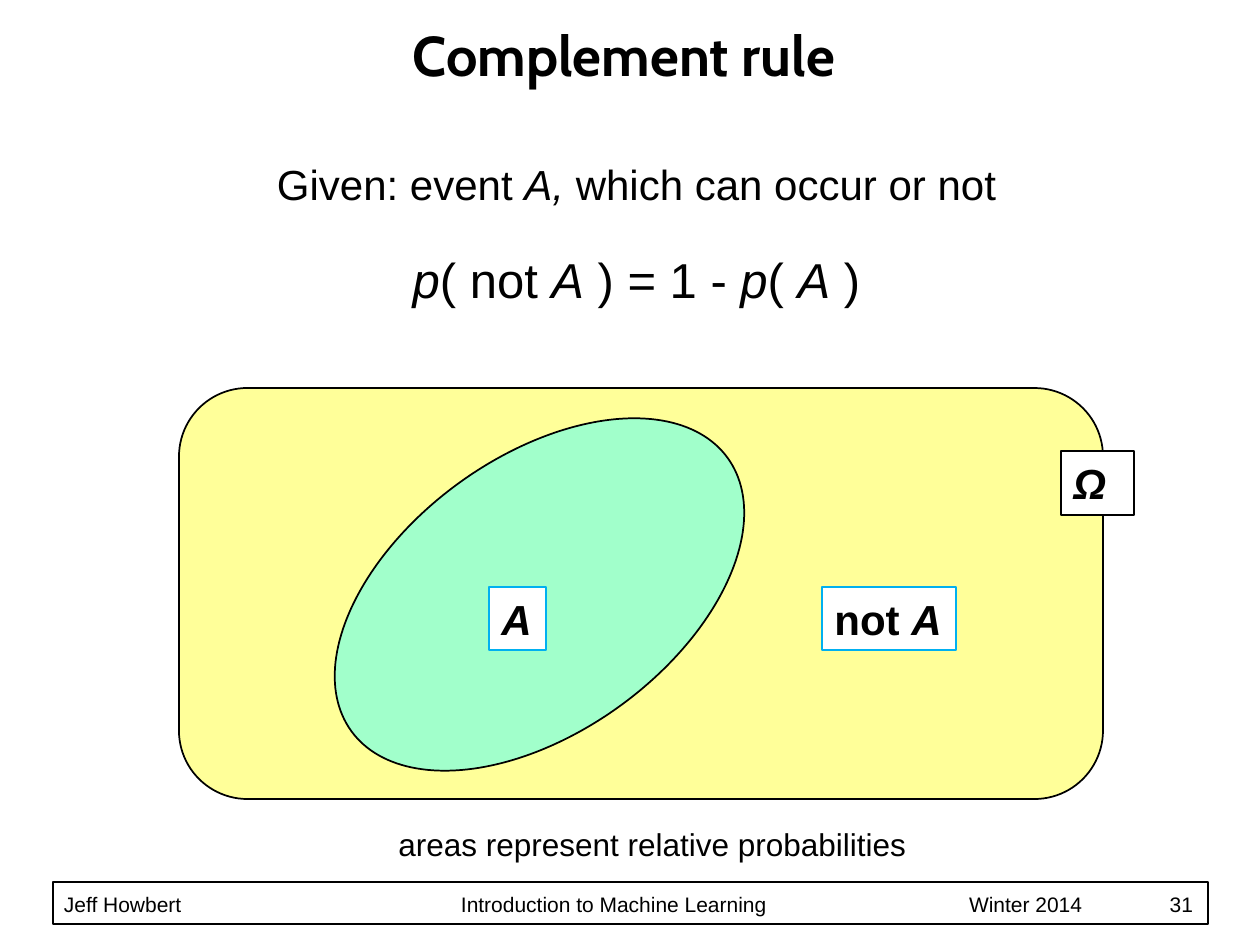
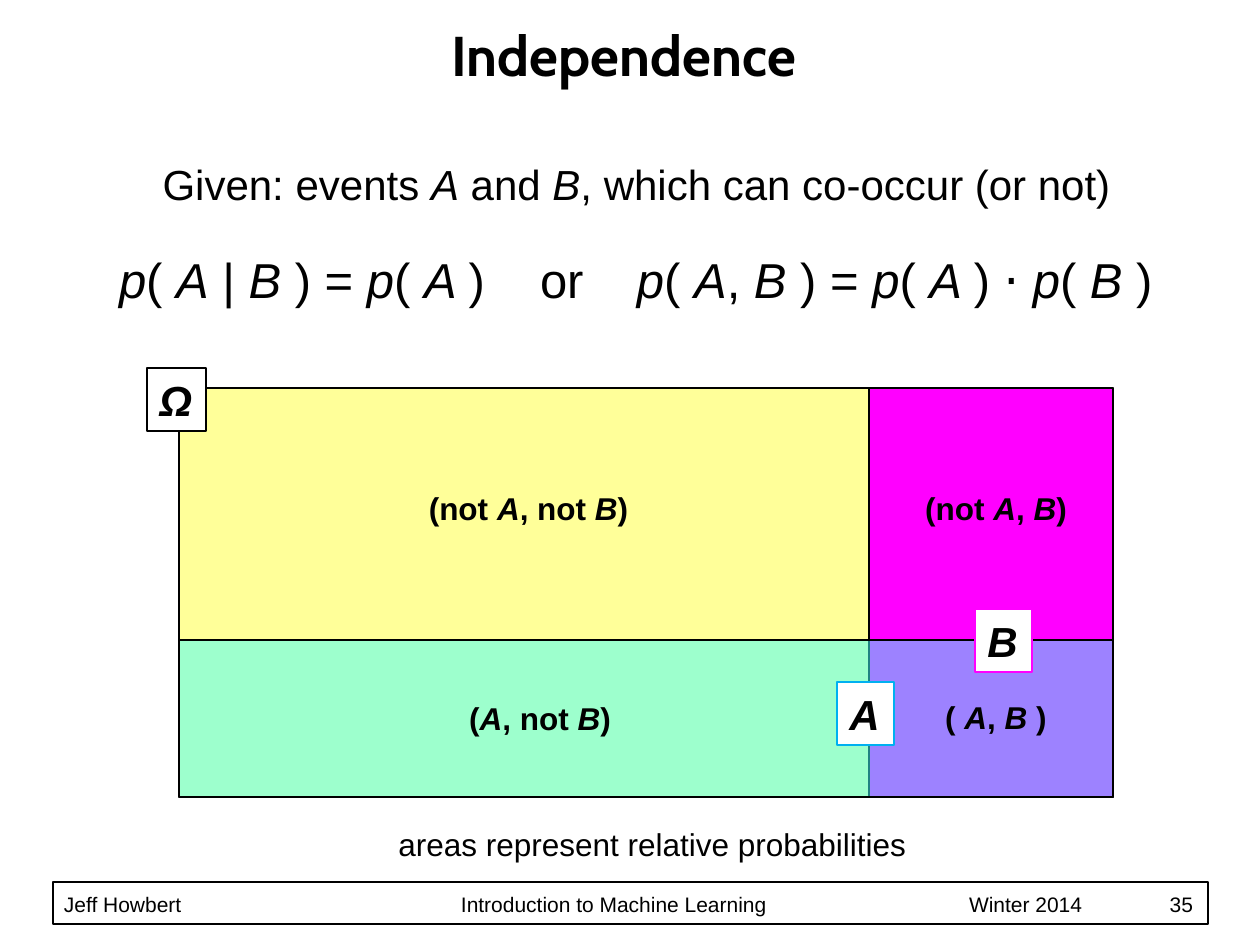
import dataclasses
import pptx
import pptx.dml.color
import pptx.enum.shapes
import pptx.enum.text
import pptx.oxml
import pptx.oxml.ns
import pptx.util

ALIGN = pptx.enum.text.PP_ALIGN
ANCHOR = pptx.enum.text.MSO_ANCHOR
SHAPE = pptx.enum.shapes.MSO_SHAPE
RGB = pptx.dml.color.RGBColor.from_string


@dataclasses.dataclass(frozen=True)
class Theme:
    heading_font: str = "Cabin"
    body_font: str = "Arial"
    ink: str = "000000"
    paper: str = "FFFFFF"
    sky: str = "00B0F0"
    yellow: str = "FFFF99"
    magenta: str = "FF00FF"
    cyan: str = "40FFFF"
    title_size: int = 32
    title_leading: int = 36
    formula_size: int = 28
    given_size: int = 24
    note_size: int = 18
    footer_size: int = 12
    footer_leading: int = 20


theme = Theme()
FLUSH = dict(margin_left=0, margin_right=0, margin_top=0, margin_bottom=0)


def px(*lengths):
    return [round(length * 914400 / 126) for length in lengths]


def write(holder, markup, size, font=theme.body_font, bold=False, align=ALIGN.LEFT,
          leading=None, tabs=(), **frame_format):
    frame = holder.text_frame
    frame_format = dict(word_wrap=True, auto_size=pptx.enum.text.MSO_AUTO_SIZE.NONE,
                        vertical_anchor=ANCHOR.TOP) | frame_format
    for attribute, value in frame_format.items():
        setattr(frame, attribute, value)
    paragraph = frame.paragraphs[0]
    paragraph.alignment = align
    if tabs:
        stops = "".join(f'<a:tab pos="{px(stop)[0]}" algn="{side}"/>' for stop, side in tabs)
        paragraph._p.get_or_add_pPr().append(pptx.oxml.parse_xml(
            f'<a:tabLst {pptx.oxml.ns.nsdecls("a")}>{stops}</a:tabLst>'))
    if leading:
        paragraph.line_spacing = pptx.util.Pt(leading)
    for index, piece in enumerate(markup.split("_")):
        if piece:
            run = paragraph.add_run()
            run.text = piece
            run_format = dict(name=font, size=pptx.util.Pt(size), bold=bold, italic=index % 2 == 1)
            for attribute, value in run_format.items():
                setattr(run.font, attribute, value)
            run.font.color.rgb = RGB(theme.ink)


lessons = [
    dict(
        title="Complement rule",
        number=31,
        given="Given: event _A,_ which can occur or not",
        formula="_p_( not _A_ ) = 1 - _p_( _A_ )",
        formula_bounds=(63, 250, 1147, 60),
        formula_format=dict(align=ALIGN.CENTER),
        regions=[
            (SHAPE.ROUNDED_RECTANGLE, (179, 388, 924, 411), theme.yellow, 100, 0),
            (SHAPE.OVAL, (307, 457, 465, 275), theme.cyan, 49, 324),
        ],
        region_names=[],
        tags=[
            ("_A_", (489, 587, 57, 63), theme.sky),
            ("_Ω_", (1061, 451, 73, 64), theme.ink),
            ("not _A_", (822, 587, 134, 63), theme.sky),
        ],
    ),
    dict(
        title="Independence",
        number=35,
        given="Given: events _A_ and _B_, which can co-occur (or not)",
        formula="_p_( _A_ | _B_ ) = _p_( _A _)\tor\t"
                "_p_( _A_, _B_ ) = _p_( _A _) _⋅ p_( _B _)",
        formula_bounds=(119, 250, 1100, 60),
        formula_format=dict(tabs=[(421, "l"), (518, "l")]),
        regions=[
            (SHAPE.RECTANGLE, (179, 388, 934, 409), theme.yellow, 100, 0),
            (SHAPE.RECTANGLE, (869, 388, 244, 409), theme.magenta, 100, 0),
            (SHAPE.RECTANGLE, (179, 640, 934, 157), theme.cyan, 51, 0),
        ],
        region_names=[
            ("(not _A_, not _B_)", (412, 483, 233, 50)),
            ("(not _A_, _B_)", (911, 483, 170, 50)),
            ("(_A_, not _B_)", (455, 693, 170, 50)),
            ("( _A_, _B_ )", (932, 692, 128, 50)),
        ],
        tags=[
            ("_B_", (975, 609, 57, 63), theme.magenta),
            ("_A_", (837, 682, 57, 63), theme.sky),
            ("_Ω_", (147, 368, 59, 63), theme.ink),
        ],
    ),
]

deck = pptx.Presentation()
deck.slide_width, deck.slide_height = px(1260, 945)

for lesson in lessons:
    slide = deck.slides.add_slide(deck.slide_layouts[5])

    title = slide.shapes.title
    title.left, title.top, title.width, title.height = px(53, 21, 1142, 73)
    write(title, lesson["title"], theme.title_size, theme.heading_font, bold=True,
          align=ALIGN.CENTER, leading=theme.title_leading, vertical_anchor=ANCHOR.BOTTOM)

    footer_band = (SHAPE.RECTANGLE, (53, 882, 1155, 42), theme.paper, 100, 0)
    for kind, bounds, colour, opacity, rotation in [footer_band, *lesson["regions"]]:
        region = slide.shapes.add_shape(kind, *px(*bounds))
        region.shadow.inherit = False
        region.rotation = rotation
        region.fill.solid()
        region.fill.fore_color.rgb = RGB(colour)
        if opacity < 100:
            tint = region.element.spPr.find(".//" + pptx.oxml.ns.qn("a:srgbClr"))
            tint.append(pptx.oxml.parse_xml(
                f'<a:alpha {pptx.oxml.ns.nsdecls("a")} val="{opacity * 1000}"/>'))
        region.line.color.rgb = RGB(theme.ink)
        region.line.width = pptx.util.Pt(1)

    footer = slide.shapes.add_textbox(*px(64, 882, 1140, 35))
    write(footer, f"Jeff Howbert\tIntroduction to Machine Learning\tWinter 2014\t{lesson['number']}",
          theme.footer_size, leading=theme.footer_leading,
          tabs=[(397, "l"), (905, "l"), (1129, "r")], vertical_anchor=ANCHOR.BOTTOM, **FLUSH)

    given = slide.shapes.add_textbox(*px(63, 158, 1147, 55))
    write(given, lesson["given"], theme.given_size, align=ALIGN.CENTER, **FLUSH)
    formula = slide.shapes.add_textbox(*px(*lesson["formula_bounds"]))
    write(formula, lesson["formula"], theme.formula_size, **lesson["formula_format"], **FLUSH)

    caption = slide.shapes.add_textbox(*px(386, 819, 538, 50))
    write(caption, "areas represent relative probabilities", theme.note_size, word_wrap=False)

    for markup, bounds in lesson["region_names"]:
        region_name = slide.shapes.add_textbox(*px(*bounds))
        write(region_name, markup, theme.note_size, bold=True, align=ALIGN.CENTER, word_wrap=False)

    for markup, bounds, outline in lesson["tags"]:
        tag = slide.shapes.add_textbox(*px(*bounds))
        tag.fill.solid()
        tag.fill.fore_color.rgb = RGB(theme.paper)
        tag.line.color.rgb = RGB(outline)
        tag.line.width = pptx.util.Pt(0.75)
        write(tag, markup, theme.given_size, bold=True)

deck.save("out.pptx")
